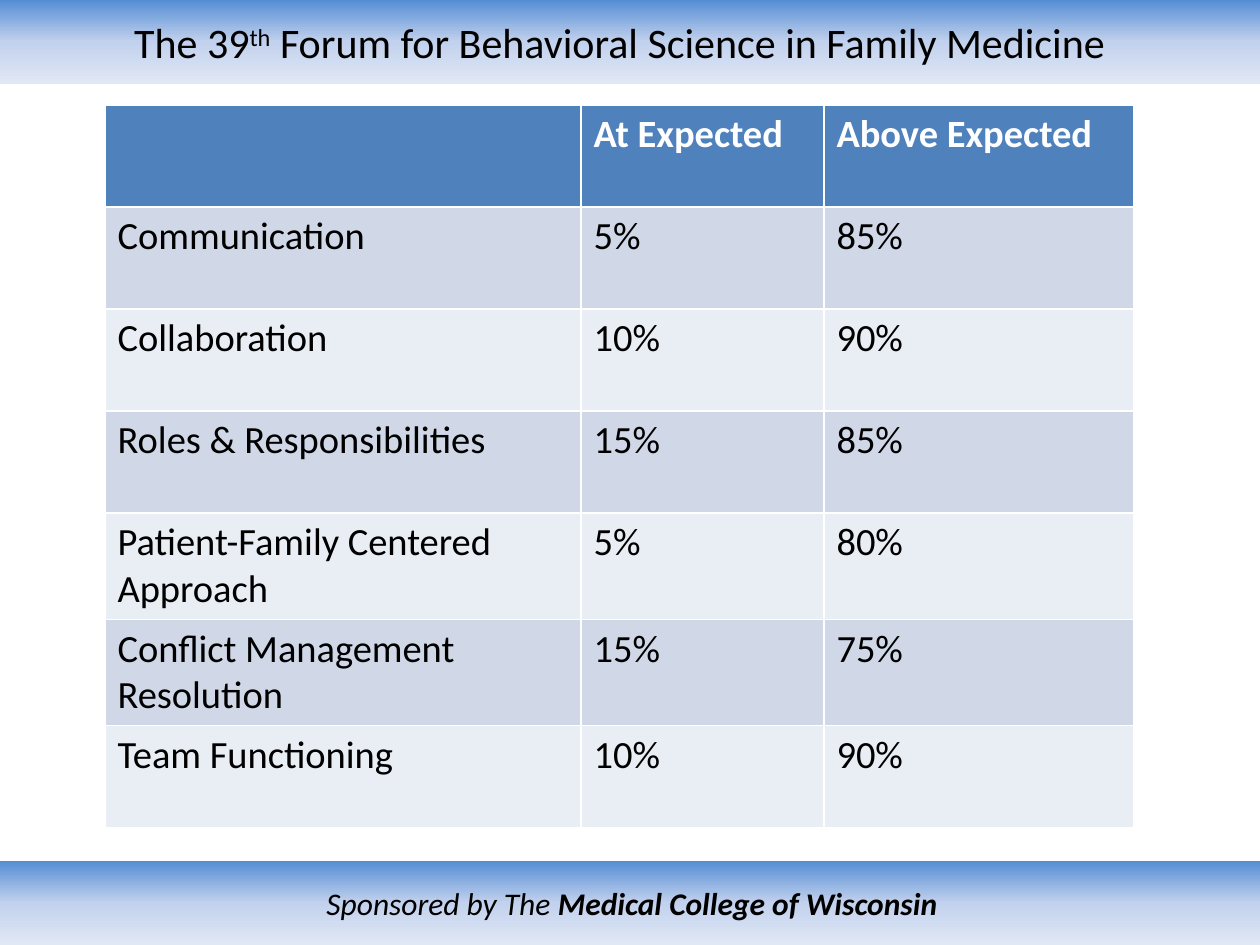
"""Build a slide with a table of ratings between two gradient bars."""
import copy
import pptx
import pptx.dml.color
import pptx.enum.shapes
import pptx.enum.text
import pptx.util

SCALE = 914400 / 126


def px(num):
    return pptx.util.Emu(round(num * SCALE))


def color(code):
    return pptx.dml.color.RGBColor.from_string(code)


deck = pptx.Presentation()
deck.slide_width, deck.slide_height = px(1260), px(945)
slide = deck.slides.add_slide(deck.slide_layouts[5])
title = slide.shapes.title
footer = slide.shapes.add_shape(
    pptx.enum.shapes.MSO_SHAPE.RECTANGLE, 0, px(861), px(1264), px(84))
footer.shadow.inherit = False
title.left, title.top, title.width, title.height = 0, 0, px(1260), px(84)

bars = [
    (title, 24, ["The 39", "th", " Forum for Behavioral Science in Family Medicine"]),
    (footer, 18, ["Sponsored by The ", "Medical College of Wisconsin"]),
]
for bar, size, words in bars:
    bar.line.fill.background()
    bar.fill.gradient()
    bar.fill.gradient_angle = 270
    first = bar.fill.gradient_stops[0]._gs
    first.addnext(copy.deepcopy(first))
    for stop, place, code in zip(bar.fill.gradient_stops, (0, 0.5, 1),
                                 ("558ED5", "C2D1ED", "E1E8F5")):
        stop.position = place
        stop.color.rgb = color(code)
    frame = bar.text_frame
    frame.word_wrap = True
    frame.auto_size = pptx.enum.text.MSO_AUTO_SIZE.NONE
    frame.vertical_anchor = pptx.enum.text.MSO_ANCHOR.MIDDLE
    line = frame.paragraphs[0]
    line.alignment = pptx.enum.text.PP_ALIGN.CENTER
    line.font.name = "Calibri"
    line.font.size = pptx.util.Pt(size)
    line.font.color.rgb = color("000000")
    for word in words:
        line.add_run().text = word

title.text_frame.margin_right = px(33)
title.text_frame.paragraphs[0].runs[1].font._element.set("baseline", "30000")
footer.text_frame.paragraphs[0].font.italic = True
footer.text_frame.paragraphs[0].runs[1].font.bold = True

rows = [
    ("", "At Expected", "Above Expected"),
    ("Communication", "5%", "85%"),
    ("Collaboration", "10%", "90%"),
    ("Roles & Responsibilities", "15%", "85%"),
    ("Patient-Family Centered Approach", "5%", "80%"),
    ("Conflict Management Resolution", "15%", "75%"),
    ("Team Functioning", "10%", "90%"),
]
widths = [476, 243, 310]
table = slide.shapes.add_table(
    len(rows), len(widths), px(105), px(105), px(sum(widths)), px(102 * len(rows))).table
for column, width in zip(table.columns, widths):
    column.width = px(width)
for i, row in enumerate(rows):
    head = i == 0
    shade = "4F81BD" if head else ("E9EDF4", "D0D8E8")[i % 2]
    for j, text in enumerate(row):
        cell = table.cell(i, j)
        cell.text = text
        cell.fill.solid()
        cell.fill.fore_color.rgb = color(shade)
        font = cell.text_frame.paragraphs[0].font
        font.name = "Calibri"
        font.size = pptx.util.Pt(22)
        font.bold = head
        font.color.rgb = color("FFFFFF" if head else "000000")

deck.save("out.pptx")
